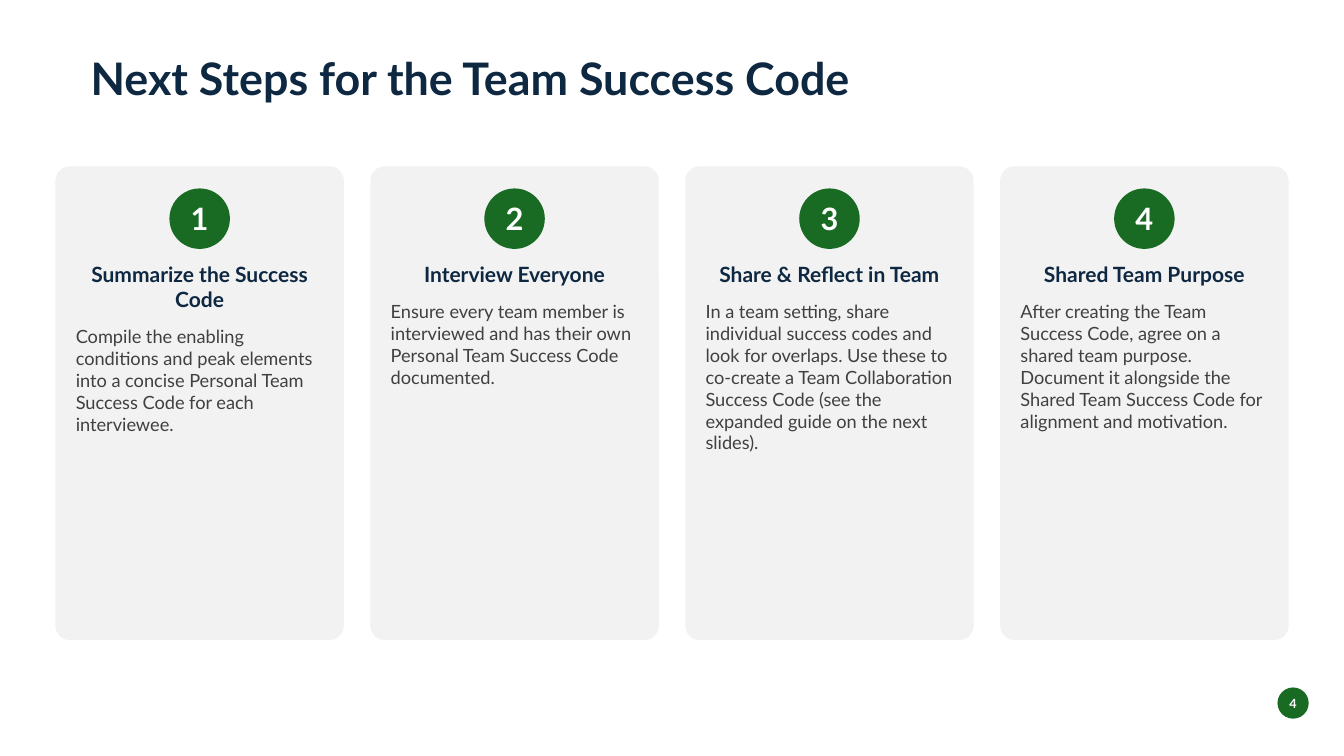
from pptx import Presentation
from pptx.dml.color import RGBColor
from pptx.enum.shapes import MSO_SHAPE
from pptx.enum.text import MSO_ANCHOR, PP_ALIGN
from pptx.util import Inches, Pt

WIDTH, HEIGHT = Inches(13.33), Inches(7.5)
NAVY, GREEN, PALE, GRAY, WHITE = "0E2841", "196B24", "F2F2F2", "404040", "FFFFFF"
CARD_LEFT, CARD_TOP, CARD_WIDTH, CARD_HEIGHT = 4.13, 22, 21.46, 62.67
CARD_PITCH = 23.43

STEPS = [
    ("Summarize the Success Code",
     "Compile the enabling conditions and peak elements into a concise "
     "Personal Team Success Code for each interviewee."),
    ("Interview Everyone",
     "Ensure every team member is interviewed and has their own "
     "Personal Team Success Code documented."),
    ("Share & Reflect in Team",
     "In a team setting, share individual success codes and look for overlaps. "
     "Use these to co-create a Team Collaboration Success Code "
     "(see the expanded guide on the next slides)."),
    ("Shared Team Purpose",
     "After creating the Team Success Code, agree on a shared team purpose. "
     "Document it alongside the Shared Team Success Code "
     "for alignment and motivation."),
]


def color(value):
    return RGBColor.from_string(value)


class StepSlide:
    """Draws styled elements on a slide, with lengths in percent of its size."""

    font = "Lato"

    def __init__(self, slide):
        self.slide = slide

    def across(self, share):
        return round(WIDTH * share / 100)

    def down(self, share):
        return round(HEIGHT * share / 100)

    def add_text(self, paragraph, text, size, ink, bold=True, align=PP_ALIGN.CENTER):
        paragraph.alignment = align
        run = paragraph.add_run()
        run.text = text
        run.font.name, run.font.size, run.font.bold = self.font, Pt(size), bold
        run.font.color.rgb = color(ink)

    def inset(self, frame, left, top, right, bottom):
        frame.margin_left, frame.margin_top = Inches(left), Inches(top)
        frame.margin_right, frame.margin_bottom = Inches(right), Inches(bottom)

    def shape(self, preset, left, top, width, height, fill):
        shape = self.slide.shapes.add_shape(preset, left, top, width, height)
        shape.shadow.inherit = False
        shape.fill.solid()
        shape.fill.fore_color.rgb = color(fill)
        shape.line.fill.background()
        shape.text_frame.word_wrap = True
        return shape

    def title(self, text):
        heading = self.slide.shapes.add_textbox(
            self.across(6), self.down(6), self.across(88), self.down(12)).text_frame
        heading.word_wrap = True
        self.add_text(heading.paragraphs[0], text, 32, NAVY, align=PP_ALIGN.LEFT)

    def badge(self, center_x, center_y, diameter, number, size, margin):
        side = self.down(diameter)
        badge = self.shape(MSO_SHAPE.OVAL, self.across(center_x) - side // 2,
                           self.down(center_y) - side // 2, side, side, GREEN)
        label = badge.text_frame
        label.vertical_anchor = MSO_ANCHOR.MIDDLE
        self.inset(label, margin, margin / 2, margin, margin / 2)
        self.add_text(label.paragraphs[0], str(number), size, WHITE)

    def card(self, left, heading, detail):
        card = self.shape(MSO_SHAPE.ROUNDED_RECTANGLE, self.across(left),
                          self.down(CARD_TOP), self.across(CARD_WIDTH),
                          self.down(CARD_HEIGHT), PALE)
        card.adjustments[0] = 0.05
        body = card.text_frame
        body.vertical_anchor = MSO_ANCHOR.TOP
        self.inset(body, 0.16, 0.9, 0.16, 0.05)
        self.add_text(body.paragraphs[0], heading, 15, NAVY)
        explanation = body.add_paragraph()
        explanation.space_before = Pt(10)
        self.add_text(explanation, detail, 13, GRAY, bold=False, align=PP_ALIGN.LEFT)


def main():
    deck = Presentation()
    deck.slide_width, deck.slide_height = WIDTH, HEIGHT
    page = StepSlide(deck.slides.add_slide(deck.slide_layouts[6]))
    page.badge(96.21, 93, 4.13, 4, 9, 0)
    page.title("Next Steps for the Team Success Code")
    for index, (heading, detail) in enumerate(STEPS):
        left = CARD_LEFT + index * CARD_PITCH
        page.card(left, heading, detail)
        page.badge(left + CARD_WIDTH / 2, 28.93, 8, index + 1, 22, 0.1)
    deck.save("out.pptx")


if __name__ == "__main__":
    main()
